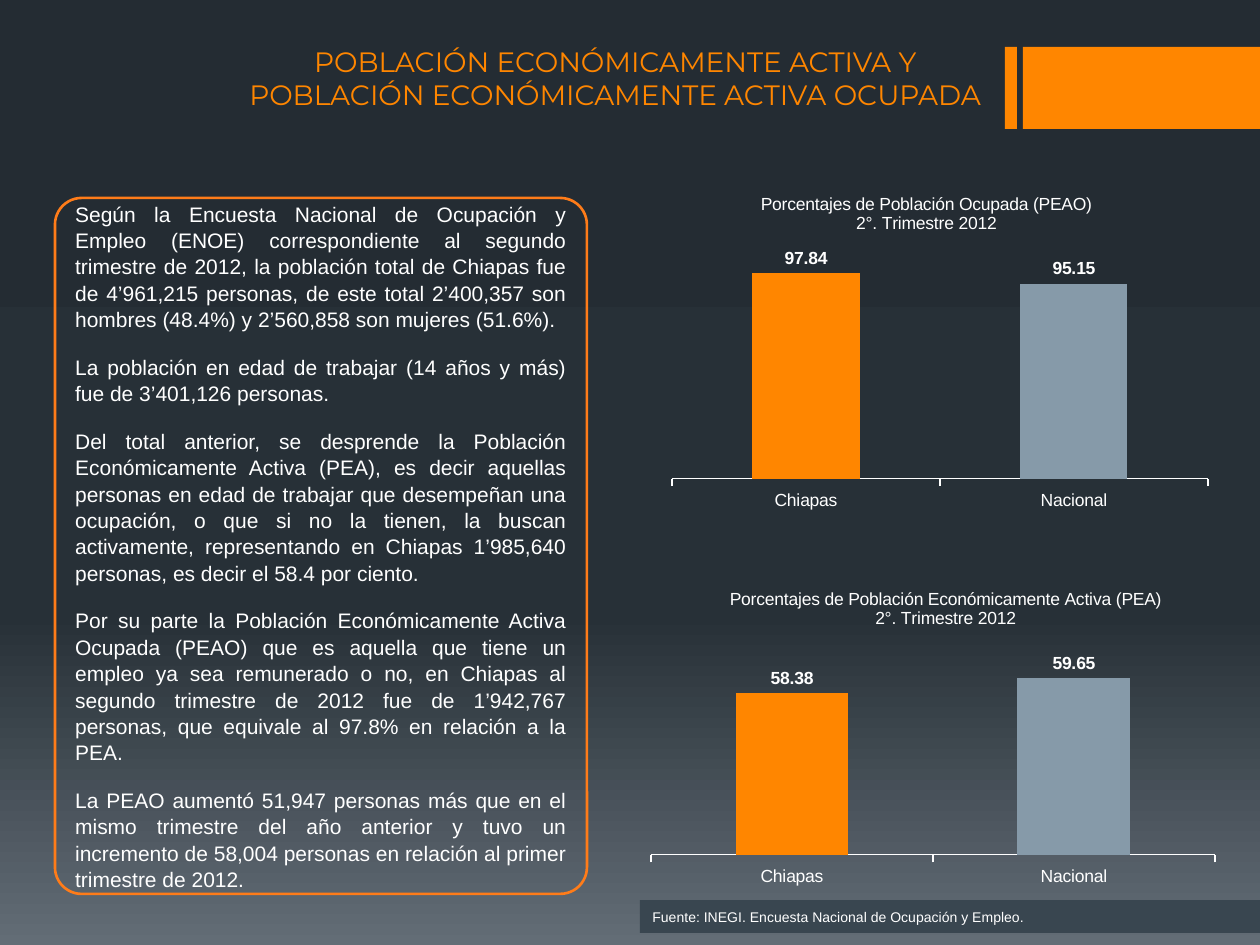
"""Build a slide on the working population of Chiapas with two charts."""
import copy
from dataclasses import dataclass
from typing import Any

import lxml.etree
import pptx
import pptx.chart.data
import pptx.dml.color
import pptx.enum.chart
import pptx.enum.shapes
import pptx.enum.text
import pptx.oxml.ns
import pptx.util

SCALE = 914400 / 126
SHAPE = pptx.enum.shapes.MSO_SHAPE
ALIGN = pptx.enum.text.PP_ALIGN
MIDDLE = pptx.enum.text.MSO_ANCHOR.MIDDLE
qn = pptx.oxml.ns.qn


@dataclass(frozen=True)
class Theme:
    orange: str = "FF8600"
    edge: str = "FF7C19"
    steel: str = "869AA9"
    slate: str = "394650"
    white: str = "FFFFFF"
    sky: tuple = ((0, "242C33"), (0.65, "273037"), (1, "636D76"))
    head: int = 16
    body: int = 12
    chart: int = 10
    note: int = 8
    sans: str = "Arial"
    show: str = "Montserrat"


@dataclass(frozen=True)
class Box:
    left: int
    top: int
    width: int
    height: int

    def place(self) -> list[int]:
        return [px(n) for n in (self.left, self.top, self.width, self.height)]


@dataclass(frozen=True)
class Graph:
    title: str
    rates: tuple[float, float]
    peak: int
    box: Box
    plot: Box
    head: tuple[int, int]


THEME = Theme()
HEAD = "POBLACIÓN ECONÓMICAMENTE ACTIVA Y\nPOBLACIÓN ECONÓMICAMENTE ACTIVA OCUPADA"
BODY = "\n".join((
    "Según la Encuesta Nacional de Ocupación y Empleo (ENOE) correspondiente al segundo "
    "trimestre de 2012, la población total de Chiapas fue de 4’961,215 personas, de este "
    "total 2’400,357 son hombres (48.4%) y 2’560,858 son mujeres (51.6%).",
    "La población en edad de trabajar (14 años y más) fue de 3’401,126 personas.",
    "Del total anterior, se desprende la Población Económicamente Activa (PEA), es decir "
    "aquellas personas en edad de trabajar que desempeñan una ocupación, o que si no la "
    "tienen, la buscan activamente, representando en Chiapas 1’985,640 personas, es decir "
    "el 58.4 por ciento.",
    "Por su parte la Población Económicamente Activa Ocupada (PEAO) que es aquella que "
    "tiene un empleo ya sea remunerado o no, en Chiapas al segundo trimestre de 2012 fue "
    "de 1’942,767 personas, que equivale al 97.8% en relación a la PEA.",
    "La PEAO aumentó 51,947 personas más que en el mismo trimestre del año anterior y tuvo "
    "un incremento de 58,004 personas en relación al primer trimestre de 2012.",
))
NOTE = "Fuente: INEGI. Encuesta Nacional de Ocupación y Empleo."
BARS = (Box(1005, 47, 12, 82), Box(1023, 47, 237, 82))
GRAPHS = (
    Graph("Porcentajes de Población Ocupada (PEAO)\n2°. Trimestre 2012", (97.84, 95.15), 100,
          Box(661, 171, 557, 348), Box(672, 265, 536, 214), (757, 188)),
    Graph("Porcentajes de Población Económicamente Activa (PEA)\n2°. Trimestre 2012",
          (58.38, 59.65), 60, Box(640, 567, 587, 326), Box(651, 674, 564, 181), (726, 583)),
)


def px(n: int) -> int:
    return round(n * SCALE)


def tint(code: str) -> pptx.dml.color.RGBColor:
    return pptx.dml.color.RGBColor.from_string(code)


def write(frame: Any, text: str, *, size: int, color: str = THEME.white,
          face: str = THEME.sans, align: Any = ALIGN.CENTER, gap: int = 0,
          lead: float = 1.0) -> None:
    for i, line in enumerate(text.split("\n")):
        para = frame.add_paragraph() if i else frame.paragraphs[0]
        para.alignment, para.line_spacing = align, lead
        para.space_before = pptx.util.Pt(gap if i else 0)
        run = para.add_run()
        run.text = line
        font = run.font
        font.size, font.name, font.bold = pptx.util.Pt(size), face, False
        font.color.rgb = tint(color)


def block(slide: Any, kind: Any, box: Box, fill: str = "", line: str = "") -> Any:
    shape = slide.shapes.add_shape(kind, *box.place())
    shape.shadow.inherit = False
    if fill:
        shape.fill.solid()
        shape.fill.fore_color.rgb = tint(fill)
    else:
        shape.fill.background()
    if line:
        shape.line.color.rgb = tint(line)
        shape.line.width = pptx.util.Pt(1.5)
    else:
        shape.line.fill.background()
    shape.text_frame.word_wrap = True
    shape.text_frame.vertical_anchor = MIDDLE
    return shape


def pin(node: Any, spot: int, **parts: Any) -> None:
    frame = node.find(qn("c:layout"))
    if frame is None:
        frame = lxml.etree.Element(qn("c:layout"))
        node.insert(spot, frame)
    hand = lxml.etree.SubElement(frame, qn("c:manualLayout"))
    for name, value in parts.items():
        part = lxml.etree.SubElement(hand, qn(f"c:{name}"))
        part.set("val", value if isinstance(value, str) else f"{value:.4f}")


def draw(slide: Any, graph: Graph) -> None:
    data = pptx.chart.data.CategoryChartData(number_format="0.00")
    data.categories = ("Chiapas", "Nacional")
    data.add_series("Series 1", graph.rates)
    box, plot = graph.box, graph.plot
    kind = pptx.enum.chart.XL_CHART_TYPE.COLUMN_CLUSTERED
    chart = slide.shapes.add_chart(kind, *box.place(), data).chart
    chart.has_legend = False
    chart.font.size, chart.font.name = pptx.util.Pt(THEME.chart), THEME.sans
    chart.font.color.rgb = tint(THEME.white)
    write(chart.chart_title.text_frame, graph.title, size=THEME.chart)
    pin(chart.element.find(".//" + qn("c:title")), 1, xMode="edge", yMode="edge",
        x=(graph.head[0] - box.left) / box.width, y=(graph.head[1] - box.top) / box.height)
    pin(chart.element.find(".//" + qn("c:plotArea")), 0,
        layoutTarget="inner", xMode="edge", yMode="edge",
        x=(plot.left - box.left) / box.width, y=(plot.top - box.top) / box.height,
        w=plot.width / box.width, h=plot.height / box.height)
    base, side = chart.category_axis, chart.value_axis
    base.major_tick_mark = pptx.enum.chart.XL_TICK_MARK.OUTSIDE
    base.format.line.color.rgb = tint(THEME.white)
    side.visible = side.has_major_gridlines = False
    side.minimum_scale, side.maximum_scale = 45, graph.peak
    group = chart.plots[0]
    group.gap_width, group.vary_by_categories = 150, False
    for i, color in enumerate((THEME.orange, THEME.steel)):
        fill = group.series[0].points[i].format.fill
        fill.solid()
        fill.fore_color.rgb = tint(color)
    group.has_data_labels = True
    tags = group.data_labels
    tags.show_value, tags.number_format, tags.number_format_is_linked = True, "0.00", False
    tags.position = pptx.enum.chart.XL_LABEL_POSITION.OUTSIDE_END
    tags.font.size, tags.font.bold, tags.font.name = pptx.util.Pt(THEME.chart), True, THEME.sans
    tags.font.color.rgb = tint(THEME.white)


def shade(slide: Any) -> None:
    fill = slide.background.fill
    fill.gradient()
    fill.gradient_angle = 270
    stops = slide.element.find(".//" + qn("a:gsLst"))
    stops.append(copy.deepcopy(stops[0]))
    for stop, (place, color) in zip(fill.gradient_stops, THEME.sky):
        stop.position, stop.color.rgb = place, tint(color)


def main() -> None:
    deck = pptx.Presentation()
    deck.slide_width, deck.slide_height = px(1260), px(945)
    slide = deck.slides.add_slide(deck.slide_layouts[6])
    shade(slide)
    for bar in BARS:
        block(slide, SHAPE.RECTANGLE, bar, THEME.orange)
    head = slide.shapes.add_textbox(*Box(232, 38, 767, 115).place()).text_frame
    head.word_wrap = True
    write(head, HEAD, size=THEME.head, color=THEME.orange, face=THEME.show)
    panel = block(slide, SHAPE.ROUNDED_RECTANGLE, Box(55, 198, 532, 696), line=THEME.edge)
    panel.adjustments[0] = 0.05
    write(panel.text_frame, BODY, size=THEME.body, align=ALIGN.JUSTIFY, gap=12, lead=1.05)
    foot = block(slide, SHAPE.RECTANGLE, Box(640, 900, 620, 33), THEME.slate)
    write(foot.text_frame, NOTE, size=THEME.note, align=ALIGN.JUSTIFY)
    for graph in GRAPHS:
        draw(slide, graph)
    deck.save("out.pptx")


if __name__ == "__main__":
    main()
